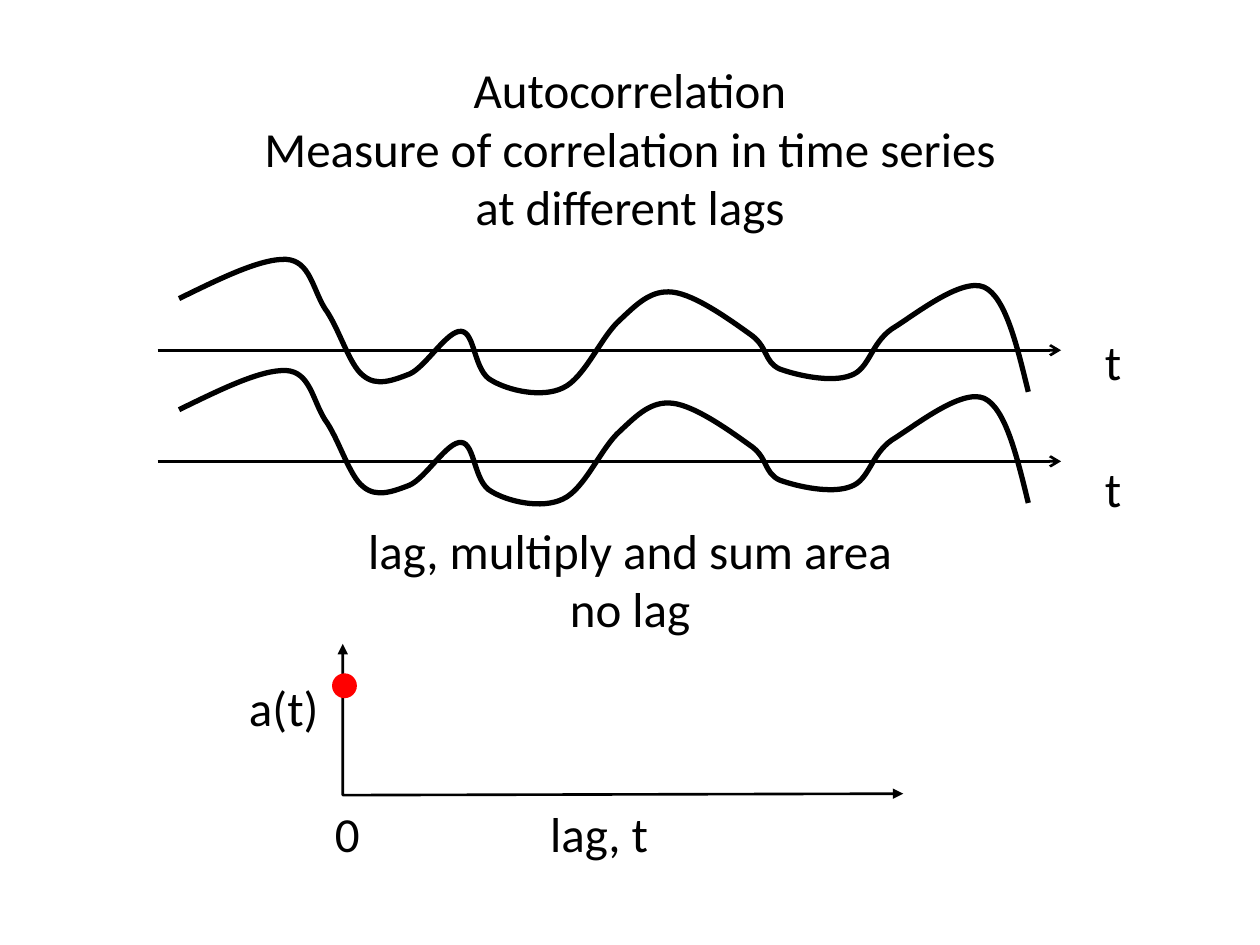
import lxml.etree
import pptx
import pptx.dml.color
import pptx.enum.shapes
import pptx.enum.text
import pptx.oxml.ns
import pptx.util

Cm = pptx.util.Cm
Pt = pptx.util.Pt
qn = pptx.oxml.ns.qn

WAVE = [
    (3.61, -1.04),
    (4.45, -1.45), (5.26, -1.85), (5.77, -1.83),
    (6.25, -1.8), (6.3, -1.24), (6.55, -0.84),
    (6.83, -0.46), (7.04, 0.3), (7.32, 0.51),
    (7.59, 0.74), (7.92, 0.61), (8.26, 0.48),
    (8.59, 0.33), (9.02, -0.41), (9.3, -0.38),
    (9.58, -0.36), (9.55, 0.43), (9.91, 0.61),
    (10.24, 0.81), (10.92, 0.97), (11.35, 0.76),
    (11.79, 0.56), (12.12, -0.28), (12.5, -0.61),
    (12.85, -0.94), (13.13, -1.22), (13.56, -1.17),
    (14.02, -1.12), (14.76, -0.58), (15.11, -0.33),
    (15.49, -0.08), (15.39, 0.23), (15.72, 0.38),
    (16.08, 0.51), (16.76, 0.66), (17.15, 0.51),
    (17.53, 0.38), (17.55, -0.13), (17.98, -0.43),
    (18.44, -0.71), (19.38, -1.47), (19.84, -1.27),
    (20.27, -1.07), (20.5, -0.1), (20.73, 0.84),
]


def color(code):
    return pptx.dml.color.RGBColor.from_string(code)


class Board:
    font = "Calibri"
    size = 28
    ink = "000000"
    mark = "FF0000"

    def __init__(self, slide):
        self.slide = slide
        self.shapes = slide.shapes

    def stroke(self, shape, width, code, **ends):
        shape.line.width = Pt(width)
        shape.line.color.rgb = color(code)
        line = shape.element.spPr.find(qn("a:ln"))
        for end, kind in ends.items():
            lxml.etree.SubElement(line, qn(f"a:{end}End")).set("type", kind)

    def label(self, text, left, top, width, height=1.45):
        box = self.shapes.add_textbox(Cm(left), Cm(top), Cm(width), Cm(height))
        frame = box.text_frame
        frame.word_wrap = True
        frame.auto_size = pptx.enum.text.MSO_AUTO_SIZE.SHAPE_TO_FIT_TEXT
        frame.text = text
        for para in frame.paragraphs:
            para.alignment = pptx.enum.text.PP_ALIGN.CENTER
            for run in para.runs:
                run.font.name = self.font
                run.font.size = Pt(self.size)
                run.font.color.rgb = color(self.ink)

    def arrow(self, left, right, y):
        line = self.shapes.add_connector(
            pptx.enum.shapes.MSO_CONNECTOR.STRAIGHT,
            Cm(left), Cm(y), Cm(right), Cm(y))
        self.stroke(line, 1.5, self.ink, tail="arrow")
        lxml.etree.SubElement(line.element.spPr, qn("a:effectLst"))

    def trace(self, points, width, **ends):
        start, *rest = [(Cm(x), Cm(y)) for x, y in points]
        pen = self.shapes.build_freeform(*start)
        pen.add_line_segments(rest, close=False)
        shape = pen.convert_to_shape()
        shape.shadow.inherit = False
        shape.fill.background()
        self.stroke(shape, width, self.ink, **ends)
        return shape

    def curve(self, points, width):
        shape = self.trace(points, width)
        steps = list(shape.element.iter(qn("a:lnTo")))
        for first, *others in zip(steps[::3], steps[1::3], steps[2::3]):
            first.tag = qn("a:cubicBezTo")
            for step in others:
                first.append(step[0])
                step.getparent().remove(step)

    def dot(self, left, top, size):
        shape = self.shapes.add_shape(
            pptx.enum.shapes.MSO_SHAPE.OVAL,
            Cm(left), Cm(top), Cm(size), Cm(size))
        shape.shadow.inherit = False
        shape.fill.solid()
        shape.fill.fore_color.rgb = color(self.mark)
        self.stroke(shape, 2, self.mark)


def main():
    deck = pptx.Presentation()
    deck.slide_width = Cm(25.4)
    deck.slide_height = Cm(19.05)
    board = Board(deck.slides.add_slide(deck.slide_layouts[6]))

    board.label("Autocorrelation\nMeasure of correlation in time series\n"
                "at different lags", 0, 1.07, 25.4, 3.84)
    for axis, top in ((7.06, 6.55), (9.3, 9.12)):
        board.arrow(3.18, 21.39, axis)
        board.curve([(x, axis + y) for x, y in WAVE], 3)
        board.label("t", 21.59, top, 1.7)

    board.trace([(6.91, 12.98), (6.91, 16.03), (18.21, 16)], 1.5,
                head="triangle", tail="triangle")
    board.label("lag, t", 8.69, 16.08, 6.78)
    board.label("a(t)", 4.45, 13.54, 2.54)
    board.label("0", 6.15, 16.08, 1.7)
    board.dot(6.73, 13.61, 0.43)
    board.label("lag, multiply and sum area\nno lag", 0, 10.36, 25.4, 2.64)

    deck.save("out.pptx")


if __name__ == "__main__":
    main()
